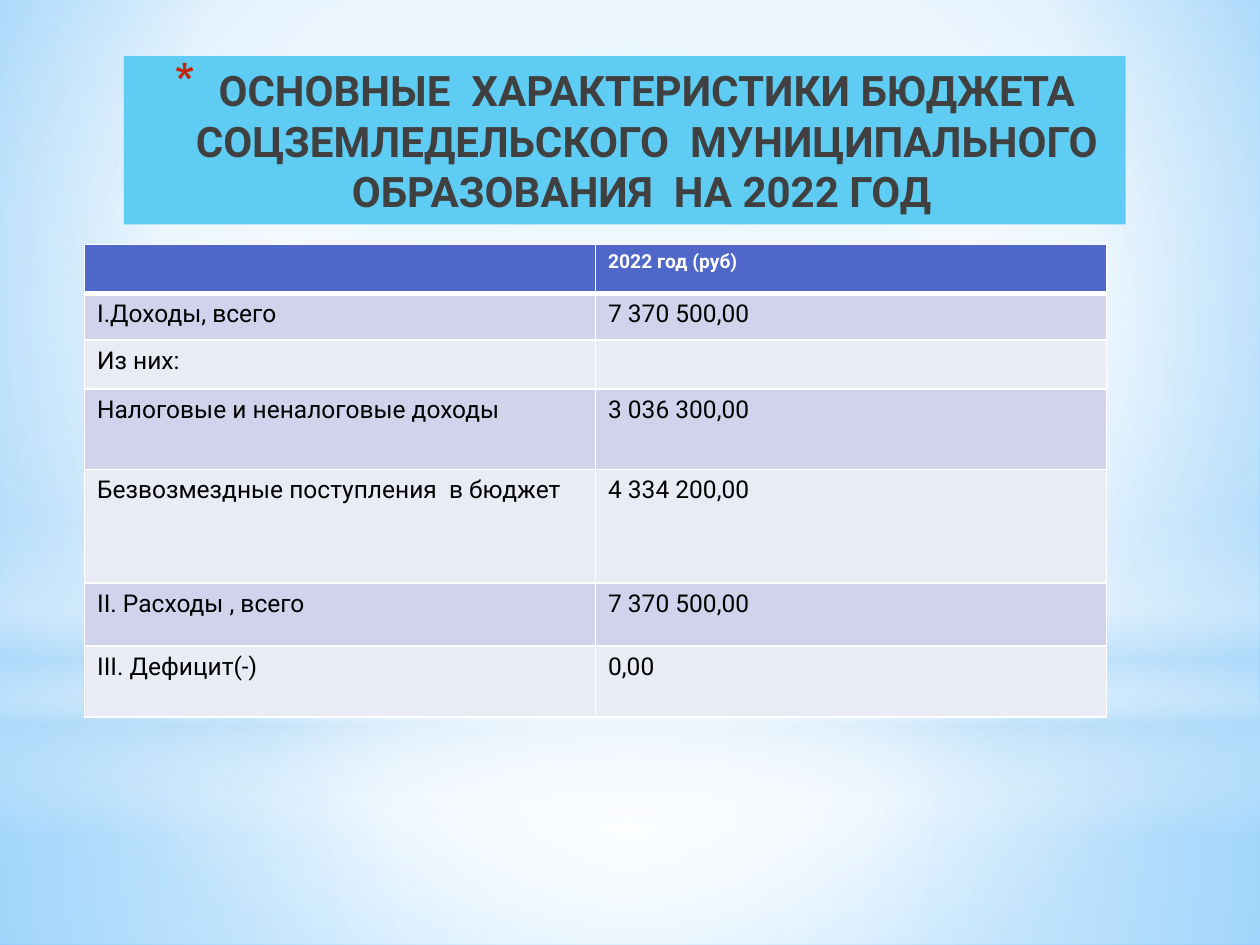
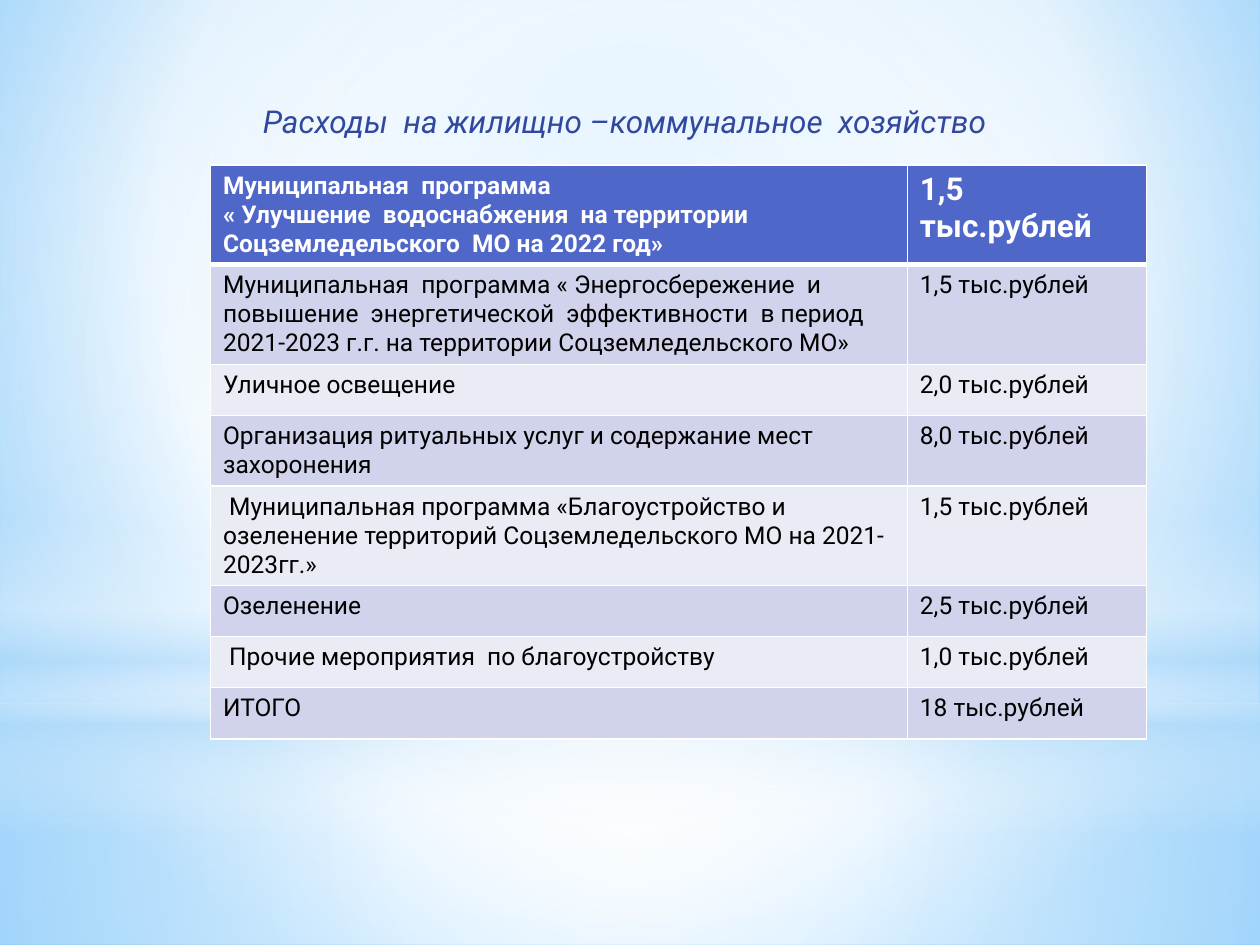
from dataclasses import dataclass

from pptx import Presentation
from pptx.dml.color import RGBColor
from pptx.enum import shapes, text
from pptx.oxml import parse_xml
from pptx.oxml.ns import nsdecls, qn
from pptx.util import Pt

FONT = "Roboto"
WHITE, BLACK, SKY = "FFFFFF", "000000", "B4DCFA"
HEADER_FILL = "4E67C8"
ROW_FILLS = ("D0D3EB", "E9EBF5")
TITLE_ONLY = 5
CENTRE = (50, 50, 50, 50)


@dataclass
class Gradient:
    """Stops are (position %, colour, opacity %); without a focus it runs downwards."""
    stops: list[tuple[int, str, int]]
    focus: tuple[int, int, int, int] | None = None


@dataclass
class Band:
    preset: shapes.MSO_SHAPE
    top: float
    height: float
    gradient: Gradient


@dataclass
class Title:
    wording: str
    box: tuple[float, float, float, float]
    size: float
    colour: str
    bold: bool = False
    italic: bool = False
    align: text.PP_ALIGN = text.PP_ALIGN.LEFT
    fill: str | None = None
    bullet: str | None = None


@dataclass
class BudgetTable:
    left: float
    top: float
    columns: tuple[float, float]
    heights: list[float]
    header_sizes: tuple[float, float]
    rows: list[tuple[str, str]]


BACKGROUND = Gradient([(0, "9ED5FF", 100), (60, WHITE, 100), (100, "5BB9FF", 100)],
                      (20, 10, 20, 60))
BANDS = [
    Band(shapes.MSO_SHAPE.RECTANGLE, 401.8, 138.2,
         Gradient([(0, WHITE, 91), (37, WHITE, 76), (100, SKY, 79)], CENTRE)),
    Band(shapes.MSO_SHAPE.RECTANGLE, 0, 401.8,
         Gradient([(0, WHITE, 89), (48, WHITE, 62), (100, SKY, 79)], CENTRE)),
    Band(shapes.MSO_SHAPE.RECTANGLE, 296.6, 180,
         Gradient([(0, WHITE, 0), (29, WHITE, 30), (45, SKY, 40),
                   (55, WHITE, 26), (65, SKY, 60), (100, WHITE, 0)])),
    Band(shapes.MSO_SHAPE.OVAL, 126, 401.8,
         Gradient([(0, WHITE, 100), (56, WHITE, 0)], CENTRE)),
]

PAGES = [
    (Title("ОСНОВНЫЕ  ХАРАКТЕРИСТИКИ БЮДЖЕТА СОЦЗЕМЛЕДЕЛЬСКОГО  "
           "МУНИЦИПАЛЬНОГО ОБРАЗОВАНИЯ  НА 2022 ГОД ",
           (70.8, 32, 572.4, 96.2), 24, "404040", bold=True,
           align=text.PP_ALIGN.CENTER, fill="5ECCF3", bullet="C3260C"),
     BudgetTable(48.3, 139.7, (292, 292), [28, 26.6, 28, 46, 65, 36, 40.5], (11, 11), [
         ("", "2022 год (руб)"),
         ("I.Доходы, всего", "7 370 500,00"),
         ("Из них:", ""),
         ("Налоговые и неналоговые доходы", "3 036 300,00"),
         ("Безвозмездные поступления  в бюджет", "4 334 200,00"),
         ("II. Расходы , всего", "7 370 500,00"),
         ("III. Дефицит(-)", "0,00"),
     ])),
    (Title("Расходы  на жилищно –коммунальное  хозяйство",
           (143, 54.8, 534, 29), 18, "31489F", italic=True),
     BudgetTable(120.3, 94.4, (398.2, 136.8), [29.2] * 8, (14, 18), [
         ("Муниципальная  программа\n« Улучшение  водоснабжения  на территории  "
          "Соцземледельского  МО на 2022 год»", "1,5 тыс.рублей"),
         ("Муниципальная  программа « Энергосбережение  и повышение  энергетической  "
          "эффективности  в период 2021-2023 г.г. на территории Соцземледельского МО»",
          "1,5 тыс.рублей"),
         ("Уличное освещение", "2,0 тыс.рублей"),
         ("Организация ритуальных услуг и содержание мест захоронения", "8,0 тыс.рублей"),
         (" Муниципальная программа «Благоустройство и озеленение территорий "
          "Соцземледельского МО на 2021-2023гг.»", "1,5 тыс.рублей"),
         ("Озеленение", "2,5 тыс.рублей"),
         (" Прочие мероприятия  по благоустройству", "1,0 тыс.рублей"),
         ("ИТОГО", "18 тыс.рублей"),
     ])),
]


def rgb(colour: str) -> RGBColor:
    return RGBColor.from_string(colour)


def paint(fill, colour: str) -> None:
    fill.solid()
    fill.fore_color.rgb = rgb(colour)


def style(paragraph, size: float, colour: str, bold=False, italic=False) -> None:
    font = paragraph.font
    font.name, font.size, font.bold, font.italic = FONT, Pt(size), bold, italic
    font.color.rgb = rgb(colour)


def paint_gradient(owner, fill, gradient: Gradient) -> None:
    """Replace the first solid fill inside the owner's XML by the gradient."""
    fill.solid()
    solid = next(owner.element.iter(qn("a:solidFill")))
    stops = "".join(
        f'<a:gs pos="{position * 1000}"><a:srgbClr val="{colour}">'
        f'<a:alpha val="{opacity * 1000}"/></a:srgbClr></a:gs>'
        for position, colour, opacity in gradient.stops)
    if gradient.focus:
        sides = " ".join(f'{side}="{share * 1000}"'
                         for side, share in zip("ltrb", gradient.focus))
        direction = f'<a:path path="circle"><a:fillToRect {sides}/></a:path>'
    else:
        direction = '<a:lin ang="5400000" scaled="0"/>'
    solid.getparent().replace(solid, parse_xml(
        f'<a:gradFill {nsdecls("a")} rotWithShape="1">'
        f'<a:gsLst>{stops}</a:gsLst>{direction}</a:gradFill>'))


def add_backdrop(layout, slide, width: int) -> None:
    """Draw the bands with the slide's shape tools and move them into the layout."""
    paint_gradient(layout, layout.background.fill, BACKGROUND)
    for index, band in enumerate(BANDS):
        shape = slide.shapes.add_shape(band.preset, 0, Pt(band.top), width, Pt(band.height))
        shape.shadow.inherit = False
        paint_gradient(shape, shape.fill, band.gradient)
        shape.line.fill.background()
        shape.element.nvSpPr.cNvPr.set("id", str(100 + index))
        layout.shapes.element.insert(2 + index, shape.element)


def add_bullet(paragraph, colour: str) -> None:
    properties = paragraph._p.get_or_add_pPr()
    properties.set("marL", str(Pt(25.2)))
    properties.set("indent", str(-Pt(25.2)))
    marks = (f'<a:buClr {nsdecls("a")}><a:srgbClr val="{colour}"/></a:buClr>',
             f'<a:buSzPct {nsdecls("a")} val="128000"/>',
             f'<a:buChar {nsdecls("a")} char="*"/>')
    for position, mark in enumerate(marks):
        properties.insert(position, parse_xml(mark))


def set_title(slide, title: Title) -> None:
    heading = slide.shapes.title
    heading.left, heading.top, heading.width, heading.height = map(Pt, title.box)
    frame = heading.text_frame
    frame.text = title.wording
    frame.word_wrap = True
    frame.auto_size = text.MSO_AUTO_SIZE.NONE
    frame.vertical_anchor = text.MSO_ANCHOR.MIDDLE
    paragraph = frame.paragraphs[0]
    paragraph.alignment = title.align
    style(paragraph, title.size, title.colour, title.bold, title.italic)
    if title.fill:
        paint(heading.fill, title.fill)
    if title.bullet:
        add_bullet(paragraph, title.bullet)


def add_borders(cell, bottom: float) -> None:
    properties = cell._tc.get_or_add_tcPr()
    for index, (side, width) in enumerate(zip("LRTB", (1, 1, 1, bottom))):
        properties.insert(index, parse_xml(
            f'<a:ln{side} {nsdecls("a")} w="{Pt(width)}"><a:solidFill>'
            f'<a:srgbClr val="{WHITE}"/></a:solidFill></a:ln{side}>'))


def add_budget_table(slide, budget: BudgetTable) -> None:
    table = slide.shapes.add_table(
        len(budget.rows), len(budget.columns), Pt(budget.left), Pt(budget.top),
        Pt(sum(budget.columns)), Pt(sum(budget.heights))).table
    for column, width in zip(table.columns, budget.columns):
        column.width = Pt(width)
    for r, (entries, height) in enumerate(zip(budget.rows, budget.heights)):
        table.rows[r].height = Pt(height)
        header = r == 0
        for c, entry in enumerate(entries):
            cell = table.cell(r, c)
            cell.text = entry
            paint(cell.fill, HEADER_FILL if header else ROW_FILLS[(r - 1) % 2])
            add_borders(cell, 3 if header else 1)
            for paragraph in cell.text_frame.paragraphs:
                style(paragraph, budget.header_sizes[c] if header else 14,
                      WHITE if header else BLACK, bold=header)


def main() -> None:
    deck = Presentation()
    deck.slide_width, deck.slide_height = Pt(720), Pt(540)
    layout = deck.slide_layouts[TITLE_ONLY]
    for title, budget in PAGES:
        slide = deck.slides.add_slide(layout)
        set_title(slide, title)
        add_budget_table(slide, budget)
    add_backdrop(layout, deck.slides[0], deck.slide_width)
    deck.save("out.pptx")


if __name__ == "__main__":
    main()
